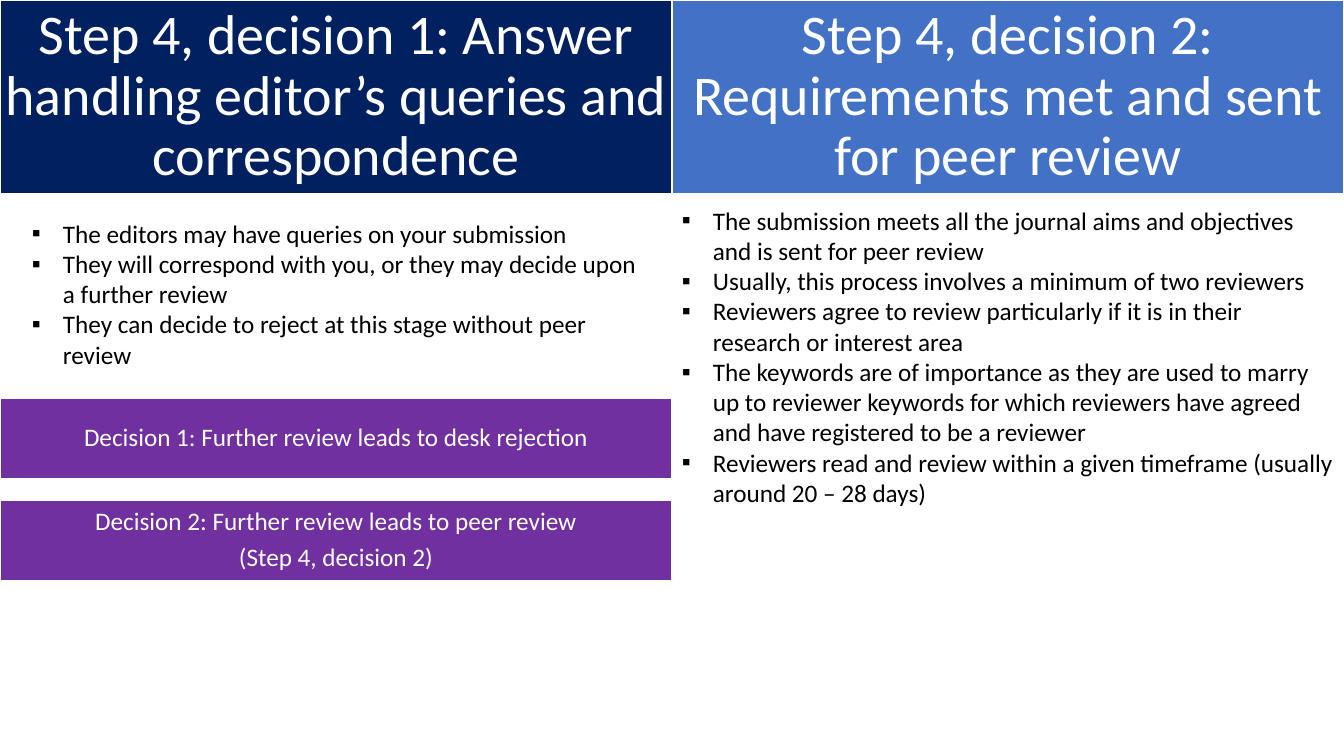
import pptx
import pptx.util
import pptx.dml.color
import pptx.enum.shapes
import pptx.enum.text
import lxml.etree

COLORS = {"navy": "002060", "blue": "4271C6", "violet": "7030A0",
          "white": "FFFFFF", "black": "000000"}
WIDE, HIGH = 1344, 756
HALF = WIDE // 2
HEAD = 194
BAR, BARTOP, STEP = 81, 398, 102
HANG = 31
PX = 914400 / 100.8

HEADS = [
    ("Step 4, decision 1: Answer handling editor’s queries and correspondence", "navy"),
    ("Step 4, decision 2: Requirements met and sent for peer review", "blue"),
]
BARS = [
    ["Decision 1: Further review leads to desk rejection"],
    ["Decision 2: Further review leads to peer review", "(Step 4, decision 2)"],
]
LISTS = [
    ((22, 213, 628, 163), [
        "The editors may have queries on your submission",
        "They will correspond with you, or they may decide upon a further review",
        "They can decide to reject at this stage without peer review",
    ]),
    ((HALF, 200, HALF, 316), [
        "The submission meets all the journal aims and objectives and is sent for peer review",
        "Usually, this process involves a minimum of two reviewers",
        "Reviewers agree to review particularly if it is in their research or interest area",
        "The keywords are of importance as they are used to marry up to reviewer keywords "
        "for which reviewers have agreed and have registered to be a reviewer",
        "Reviewers read and review within a given timeframe (usually around 20 – 28 days)",
    ]),
]


def emu(px):
    return pptx.util.Emu(round(px * PX))


def apply(item, form):
    for key, value in form.items():
        setattr(item, key, value)


def place(box):
    return dict(zip(("left", "top", "width", "height"), map(emu, box)))


def write(shape, lines, size, color, frame, para):
    text = shape.text_frame
    text.text = "\n".join(lines)
    apply(text, {"word_wrap": True, "auto_size": pptx.enum.text.MSO_AUTO_SIZE.NONE, **frame})
    for line in text.paragraphs:
        apply(line, para)
        apply(line.font, {"name": "Calibri", "size": pptx.util.Pt(size)})
        line.font.color.rgb = pptx.dml.color.RGBColor.from_string(COLORS[color])


def panel(shape, box, fill, lines, size, inset):
    apply(shape, place(box))
    shape.shadow.inherit = False
    shape.fill.solid()
    shape.fill.fore_color.rgb = pptx.dml.color.RGBColor.from_string(COLORS[fill])
    shape.line.color.rgb = pptx.dml.color.RGBColor.from_string(COLORS["white"])
    shape.line.width = pptx.util.Pt(1)
    sides = ("margin_left", "margin_top", "margin_right", "margin_bottom")
    frame = {"vertical_anchor": pptx.enum.text.MSO_ANCHOR.MIDDLE,
             **dict.fromkeys(sides, emu(inset))}
    para = {"alignment": pptx.enum.text.PP_ALIGN.CENTER, "line_spacing": 0.9,
            "space_before": pptx.util.Pt(0), "space_after": pptx.util.Pt(0.35 * size)}
    write(shape, lines, size, "white", frame, para)


def bullet(line):
    props = line._p.get_or_add_pPr()
    props.set("marL", str(emu(HANG)))
    props.set("indent", str(-emu(HANG)))
    space = "{http://schemas.openxmlformats.org/drawingml/2006/main}"
    lxml.etree.SubElement(props, space + "buFont", typeface="Arial")
    lxml.etree.SubElement(props, space + "buChar", char="▪")


def main():
    deck = pptx.Presentation()
    apply(deck, {"slide_width": emu(WIDE), "slide_height": emu(HIGH)})
    slide = deck.slides.add_slide(deck.slide_layouts[5])
    shapes = slide.shapes

    def rect():
        return shapes.add_shape(pptx.enum.shapes.MSO_SHAPE.RECTANGLE, 0, 0, 0, 0)

    for col, (head, fill) in enumerate(HEADS):
        shape = rect() if col else shapes.title
        panel(shape, (col * HALF, 0, HALF, HEAD), fill, [head], 40, 1)
    for row, lines in enumerate(BARS):
        panel(rect(), (0, BARTOP + row * STEP, HALF, BAR), "violet", lines, 18, 5)
    for box, lines in LISTS:
        shape = shapes.add_textbox(*map(emu, box))
        write(shape, lines, 18, "black", {}, {})
        for line in shape.text_frame.paragraphs:
            bullet(line)
    deck.save("out.pptx")


if __name__ == "__main__":
    main()
